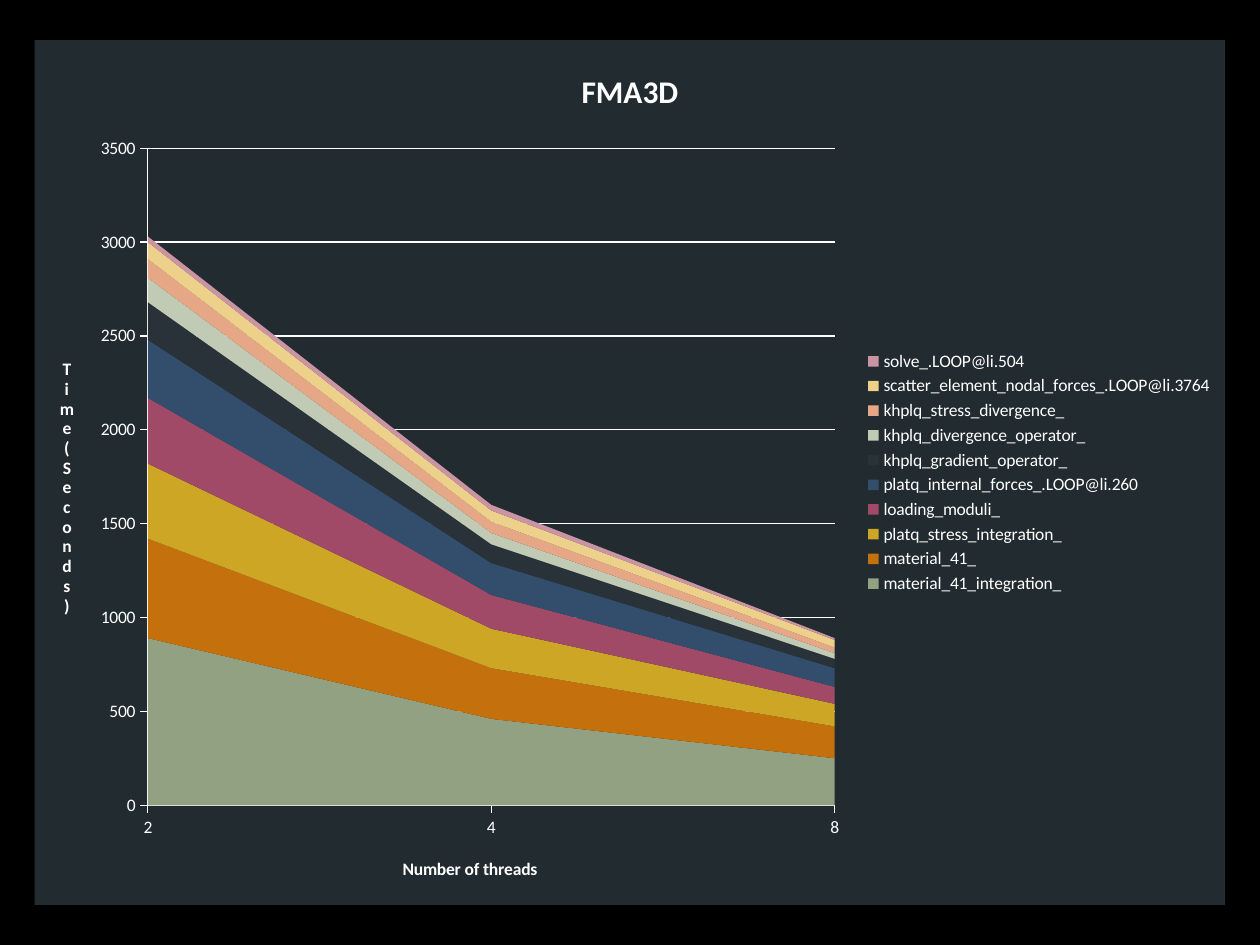
from lxml.etree import fromstring
from pptx import Presentation
from pptx.chart.data import CategoryChartData
from pptx.dml.color import RGBColor
from pptx.enum.chart import XL_CHART_TYPE, XL_LEGEND_POSITION, XL_TICK_MARK
from pptx.oxml.ns import qn
from pptx.util import Cm, Pt

BLACK = RGBColor(0x00, 0x00, 0x00)
WHITE = RGBColor(0xFF, 0xFF, 0xFF)
SLATE = RGBColor(0x22, 0x2B, 0x2F)
CHART_NS = (
    'xmlns:c="http://schemas.openxmlformats.org/drawingml/2006/chart" '
    'xmlns:a="http://schemas.openxmlformats.org/drawingml/2006/main"'
)

THREADS = ["2", "4", "8"]
ROUTINES = [
    ("material_41_integration_", (890, 460, 250), RGBColor(0x92, 0xA1, 0x82)),
    ("material_41_", (530, 270, 170), RGBColor(0xC4, 0x70, 0x0C)),
    ("platq_stress_integration_", (400, 210, 120), RGBColor(0xCC, 0xA6, 0x24)),
    ("loading_moduli_", (350, 180, 90), RGBColor(0xA0, 0x4A, 0x67)),
    ("platq_internal_forces_.LOOP@li.260", (310, 170, 100), RGBColor(0x33, 0x4D, 0x6C)),
    ("khplq_gradient_operator_", (200, 100, 50), RGBColor(0x28, 0x32, 0x38)),
    ("khplq_divergence_operator_", (130, 60, 30), RGBColor(0xC0, 0xCA, 0xB4)),
    ("khplq_stress_divergence_", (100, 60, 30), RGBColor(0xE5, 0xA7, 0x85)),
    ("scatter_element_nodal_forces_.LOOP@li.3764", (90, 60, 40), RGBColor(0xED, 0xD0, 0x8A)),
    ("solve_.LOOP@li.504", (30, 30, 10), RGBColor(0xCA, 0x94, 0xA4)),
]


class ChartSlide:
    """Holds the style and the current slide, and adds chart elements to it."""

    font = "Calibri"
    size = Pt(10)
    title_size = Pt(18)
    color = WHITE
    line_width = Pt(0.75)

    def __init__(self, prs, background):
        self.s = prs.slides.add_slide(prs.slide_layouts[6])
        fill = self.s.background.fill
        fill.solid()
        fill.fore_color.rgb = background

    def style_font(self, font, size, bold=False):
        font.name = self.font
        font.size = size
        font.bold = bold
        font.color.rgb = self.color

    def style_line(self, line):
        line.color.rgb = self.color
        line.width = self.line_width

    def title(self, owner, text, size):
        tf = owner.text_frame
        p = tf.paragraphs[0]
        p.text = text
        self.style_font(p.font, size, bold=True)
        return tf

    def axis(self, axis, text):
        self.style_line(axis.format.line)
        axis.major_tick_mark = XL_TICK_MARK.OUTSIDE
        axis.minor_tick_mark = XL_TICK_MARK.NONE
        return self.title(axis.axis_title, text, self.size)

    def legend(self, chart):
        chart.has_legend = True
        chart.legend.position = XL_LEGEND_POSITION.RIGHT
        chart.legend.include_in_layout = False
        self.style_font(chart.legend.font, self.size)

    def plot_layout(self, chart, **box):
        area = chart.element.find(".//" + qn("c:plotArea"))
        for old in area.findall(qn("c:layout")):
            area.remove(old)
        modes = '<c:layoutTarget val="inner"/><c:xMode val="edge"/><c:yMode val="edge"/>'
        sides = "".join(f'<c:{side} val="{part}"/>' for side, part in box.items())
        area.insert(0, fromstring(
            f"<c:layout {CHART_NS}><c:manualLayout>{modes}{sides}</c:manualLayout></c:layout>"))

    def background(self, chart, color):
        chart.element.find(qn("c:chart")).addnext(fromstring(
            f'<c:spPr {CHART_NS}><a:solidFill><a:srgbClr val="{color}"/></a:solidFill>'
            "<a:ln><a:noFill/></a:ln></c:spPr>"))

    def area_chart(self, title, categories, series, left, top, width, height):
        data = CategoryChartData()
        data.categories = categories
        for name, values, _ in series:
            data.add_series(name, values)
        chart = self.s.shapes.add_chart(
            XL_CHART_TYPE.AREA_STACKED, left, top, width, height, data).chart
        self.style_font(chart.font, self.size)
        chart.has_title = True
        self.title(chart.chart_title, title, self.title_size)
        chart.chart_title.include_in_layout = True
        chart.plots[0].vary_by_categories = False
        for ser, (_, _, color) in zip(chart.plots[0].series, series):
            ser.format.fill.solid()
            ser.format.fill.fore_color.rgb = color
            ser.format.line.fill.background()
        self.legend(chart)
        self.background(chart, SLATE)
        return chart


def main():
    prs = Presentation()
    prs.slide_width, prs.slide_height = Cm(25.4), Cm(19.05)
    slide = ChartSlide(prs, BLACK)
    chart = slide.area_chart(
        "FMA3D", THREADS, ROUTINES, Cm(0.7), Cm(0.81), Cm(24), Cm(17.43))
    slide.plot_layout(chart, x=0.095, y=0.125, w=0.577, h=0.76)

    slide.axis(chart.category_axis, "Number of threads")
    chart.category_axis.has_major_gridlines = False
    values = chart.value_axis
    tf = slide.axis(values, "Time(Seconds)")
    body = tf._txBody.find(qn("a:bodyPr"))
    body.set("rot", "0")
    body.set("vert", "wordArtVert")
    values.minimum_scale, values.maximum_scale, values.major_unit = 0, 3500, 500
    values.has_major_gridlines = True
    slide.style_line(values.major_gridlines.format.line)
    values.tick_labels.number_format = "0"
    values.tick_labels.number_format_is_linked = False
    chart.element.find(".//" + qn("c:crossBetween")).set("val", "midCat")
    prs.save("out.pptx")


if __name__ == "__main__":
    main()
